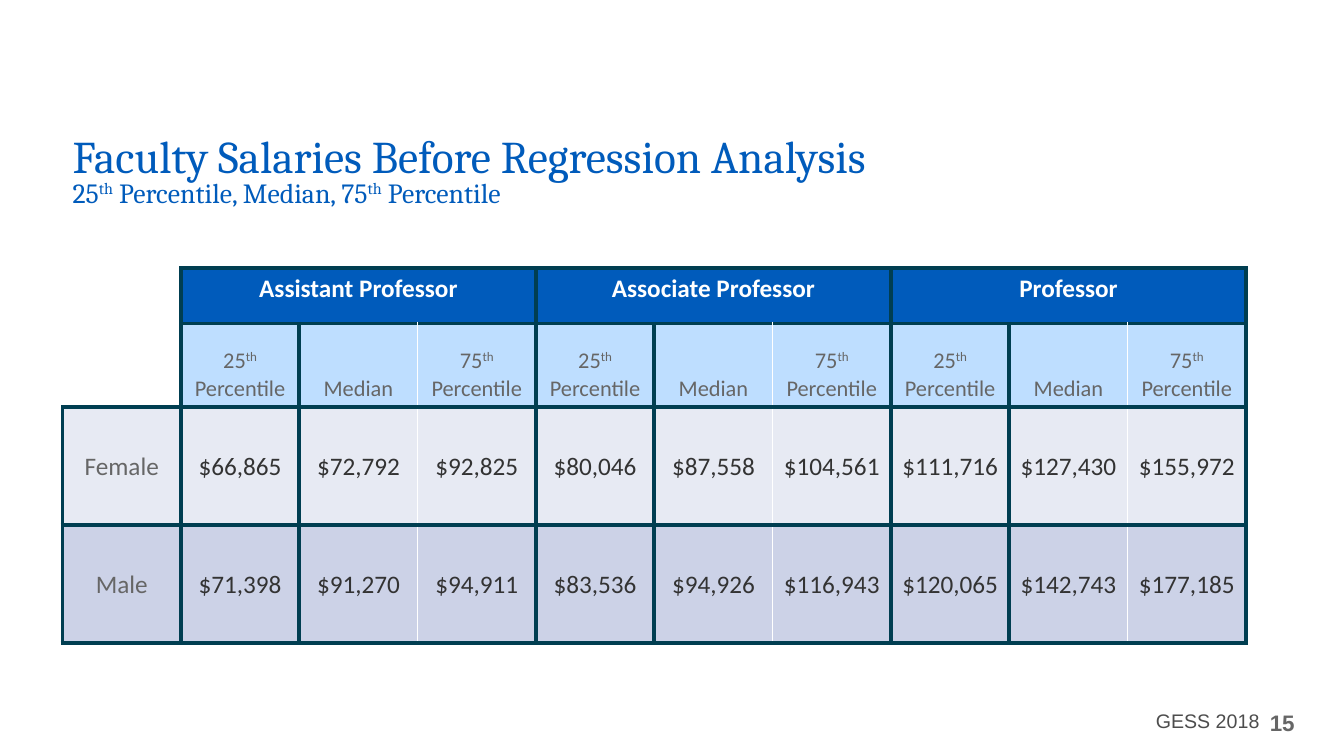
from lxml.etree import SubElement
from pptx import Presentation
from pptx.dml.color import RGBColor as Rgb
from pptx.enum.text import MSO_ANCHOR as Anchor, MSO_AUTO_SIZE as AutoSize, PP_ALIGN as Align
from pptx.oxml.ns import qn
from pptx.util import Pt

COLORS = {
    "white": "FFFFFF", "blue": "005BBB", "sky": "BEDEFF", "navy": "003E51",
    "female": "E7EAF3", "male": "CCD2E7", "gray": "666666",
    "figure": "333333", "footer": "4D4D4D",
}
RANKS = ["Assistant Professor", "Associate Professor", "Professor"]
MEASURES = ["25^th^ Percentile", "Median", "75^th^ Percentile"]
SALARIES = {
    "Female": ["$66,865", "$72,792", "$92,825", "$80,046", "$87,558",
               "$104,561", "$111,716", "$127,430", "$155,972"],
    "Male": ["$71,398", "$91,270", "$94,911", "$83,536", "$94,926",
             "$116,943", "$120,065", "$142,743", "$177,185"],
}
COLUMN_WIDTH = 84.53
ROW_HEIGHTS = [39.5, 59.8, 84.3, 84.3]


class SalarySlide:
    """Holds the style and the slide, and adds each kind of element."""

    def __init__(self, deck):
        self.slide = deck.slides.add_slide(deck.slide_layouts[5])

    def add_runs(self, paragraph, text, font, size, color, bold=False):
        """Add text as runs, raising the parts between carets."""
        for position, part in enumerate(text.split("^")):
            run = paragraph.add_run()
            run.text = part
            run.font.name, run.font.size, run.font.bold = font, Pt(size), bold
            run.font.color.rgb = Rgb.from_string(COLORS[color])
            if position % 2:
                run._r.get_or_add_rPr().set("baseline", "30000")

    def title(self, heading, subheading, left, top, width, height):
        """Fill the title placeholder with a heading and a smaller line."""
        title = self.slide.shapes.title
        title.left, title.top, title.width, title.height = map(Pt, (left, top, width, height))
        frame = title.text_frame
        frame.auto_size, frame.vertical_anchor = AutoSize.NONE, Anchor.BOTTOM
        paragraph = frame.paragraphs[0]
        paragraph.alignment, paragraph.line_spacing = Align.LEFT, 0.8
        self.add_runs(paragraph, heading, "Cambria", 32.4, "blue")
        paragraph.add_line_break()
        self.add_runs(paragraph, subheading, "Cambria", 19.8, "blue")

    def label(self, text, left, top, width, height, size, color,
              bold=False, align=Align.LEFT, anchor=Anchor.TOP):
        """Add a one-line Arial text box."""
        frame = self.slide.shapes.add_textbox(*map(Pt, (left, top, width, height))).text_frame
        frame.word_wrap, frame.vertical_anchor = True, anchor
        frame.paragraphs[0].alignment = align
        self.add_runs(frame.paragraphs[0], text, "Arial", size, color, bold)

    def border(self, cell, side, dark):
        """Draw one side of a cell."""
        line = SubElement(cell._tc.get_or_add_tcPr(), qn(f"a:ln{side}"),
                          w=str(Pt(3 if dark else 1)))
        fill = SubElement(line, qn("a:solidFill"))
        SubElement(fill, qn("a:srgbClr"), val=COLORS["navy" if dark else "white"])

    def cell(self, table, row, column, fill):
        """Return a cell with its borders and fill set."""
        def upright(edge):
            return row > 1 if edge == 0 else row == 0 or edge % 3 != 0

        def level(edge):
            return column > 0 or edge > 1

        cell = table.cell(row, column)
        self.border(cell, "L", upright(column))
        self.border(cell, "R", upright(column + 1))
        self.border(cell, "T", level(row))
        self.border(cell, "B", level(row + 1))
        cell.fill.solid()
        cell.fill.fore_color.rgb = Rgb.from_string(COLORS[fill])
        return cell

    def fill_cell(self, cell, text, size, color, anchor, bold=False):
        """Put centred text into a cell."""
        cell.vertical_anchor = anchor
        paragraph = cell.text_frame.paragraphs[0]
        paragraph.alignment = Align.CENTER
        self.add_runs(paragraph, text, "Calibri", size, color, bold)

    def salary_table(self, left, top):
        """Add the table of salaries by rank, percentile and gender."""
        count = 1 + len(RANKS) * len(MEASURES)
        table = self.slide.shapes.add_table(
            len(ROW_HEIGHTS), count, Pt(left), Pt(top),
            Pt(COLUMN_WIDTH * count), Pt(sum(ROW_HEIGHTS))).table
        table.first_row = table.horz_banding = False
        for column in table.columns:
            column.width = Pt(COLUMN_WIDTH)
        for row, height in zip(table.rows, ROW_HEIGHTS):
            row.height = Pt(height)

        for row, fill in enumerate(["blue", "sky"]):
            for column in range(count):
                cell = self.cell(table, row, column, fill if column else "white")
                if row and column:
                    measure = MEASURES[(column - 1) % len(MEASURES)]
                    self.fill_cell(cell, measure, 16, "gray", Anchor.BOTTOM)
        for index, rank in enumerate(RANKS):
            first = 1 + index * len(MEASURES)
            header = table.cell(0, first)
            header.merge(table.cell(0, first + len(MEASURES) - 1))
            self.fill_cell(header, rank, 18, "white", Anchor.TOP, True)

        for row, (gender, salaries) in enumerate(SALARIES.items(), 2):
            for column, text in enumerate([gender, *salaries]):
                cell = self.cell(table, row, column, gender.lower())
                cell.margin_left = cell.margin_right = cell.margin_top = Pt(0.7)
                cell.margin_bottom = Pt(0)
                self.fill_cell(cell, text, 18, "figure" if column else "gray", Anchor.MIDDLE)


def main():
    """Build and save the salary slide."""
    deck = Presentation()
    deck.slide_width, deck.slide_height = Pt(960), Pt(540)
    page = SalarySlide(deck)
    page.title("Faculty Salaries Before Regression Analysis",
               "25^th^ Percentile, Median, 75^th^ Percentile", 44.7, 96.5, 828, 56)
    page.salary_table(44.7, 191.5)
    page.label("15", 871.8, 495, 60, 41.8, 16, "gray", True, Align.RIGHT, Anchor.MIDDLE)
    page.label("GESS 2018", 818.5, 502.5, 92, 24, 14, "footer")
    deck.save("out.pptx")


if __name__ == "__main__":
    main()
